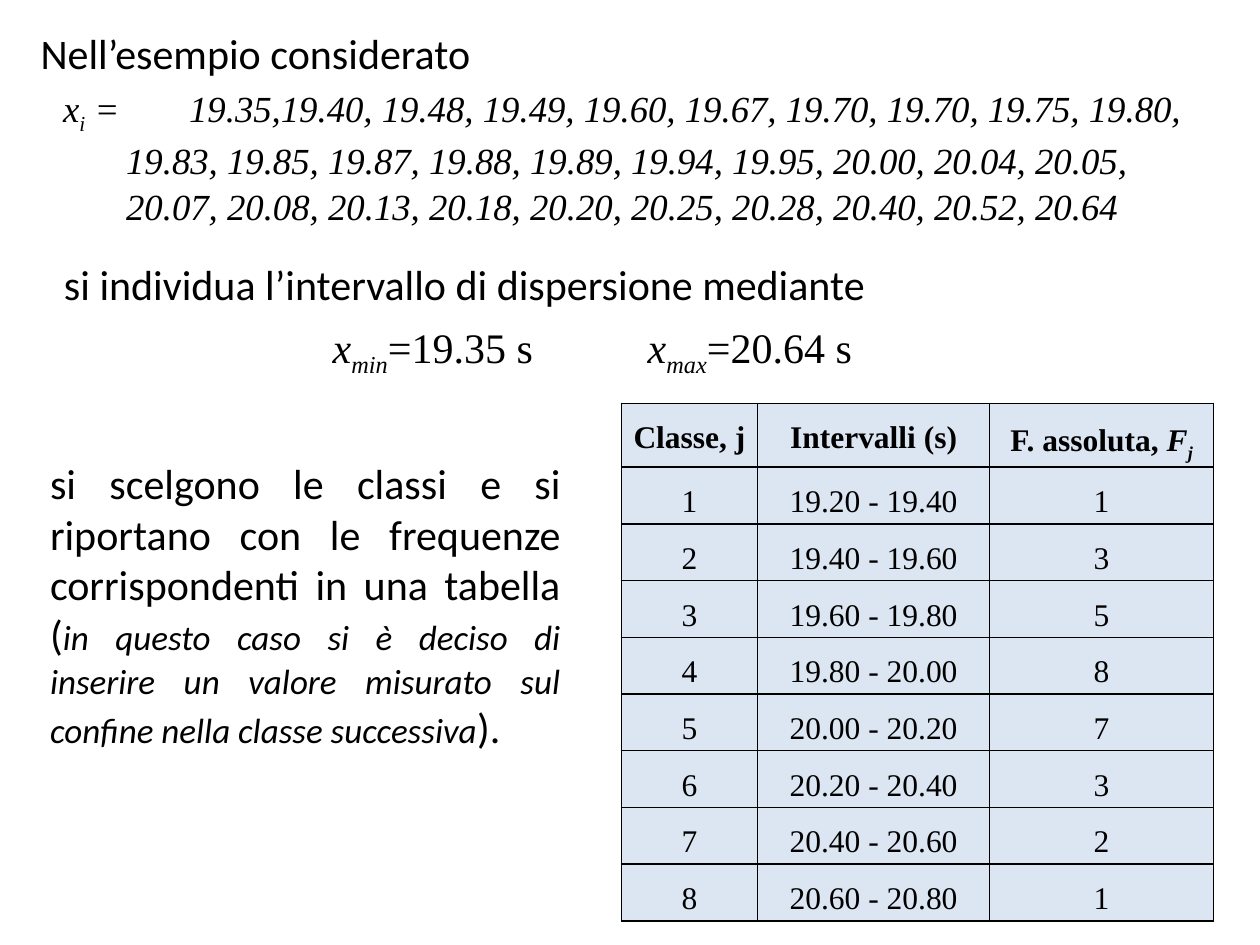
from dataclasses import dataclass

from lxml import etree
from pptx import Presentation
from pptx.dml.color import RGBColor
from pptx.enum.text import MSO_ANCHOR, MSO_AUTO_SIZE, PP_ALIGN
from pptx.oxml.ns import qn
from pptx.util import Pt

TOP = MSO_ANCHOR.TOP
NO_FIT = MSO_AUTO_SIZE.NONE
CENTER, JUSTIFY = PP_ALIGN.CENTER, PP_ALIGN.JUSTIFY
TITLE_ONLY = 5


@dataclass(frozen=True)
class Theme:
    ink: RGBColor = RGBColor(0, 0, 0)
    fill: RGBColor = RGBColor(0xDC, 0xE6, 0xF2)
    sans: str = "Calibri"
    serif: str = "Times New Roman"
    text: float = 24
    data: float = 21
    note: float = 20
    cell: float = 18
    rule: float = 1


@dataclass(frozen=True)
class Run:
    text: str
    italic: bool | None = None
    sub: bool = False
    size: float | None = None


@dataclass(frozen=True)
class Block:
    box: tuple[float, float, float, float]
    lines: list[list[Run]]
    face: str
    size: float
    align: PP_ALIGN = JUSTIFY
    italic: bool = False
    gap: float = 0


THEME = Theme()

HEAD = Block((16, 12, 623.5, 65.5), [[Run("Nell’esempio considerato")]],
             THEME.sans, THEME.text)
BLOCKS = [
    Block((29, 45.5, 682.5, 83.5), [
        [Run("x"), Run("i", sub=True),
         Run(" = \t19.35,19.40, 19.48, 19.49, 19.60, 19.67, 19.70, 19.70, 19.75, 19.80, ")],
        [Run("\t19.83, 19.85, 19.87, 19.88, 19.89, 19.94, 19.95, 20.00, 20.04, 20.05, ")],
        [Run("\t20.07, 20.08, 20.13, 20.18, 20.20, 20.25, 20.28, 20.40, 20.52, 20.64")],
    ], THEME.serif, THEME.data, italic=True, gap=1),
    Block((29.5, 144, 618, 36),
          [[Run("si individua l’intervallo di dispersione mediante")]],
          THEME.sans, THEME.text),
    Block((158.5, 180, 360, 36), [[
        Run("x", True), Run("min", True, True), Run("=19.35 s\t\t"),
        Run("x", True), Run("max", True, True), Run("=20.64 s"),
    ]], THEME.serif, THEME.text, CENTER),
    Block((21.5, 258, 306, 177), [[
        Run("si scelgono le classi e si riportano con le frequenze "
            "corrispondenti in una tabella ("),
        Run("in questo caso si è deciso di inserire un valore misurato "
            "sul confine nella classe successiva", True, size=THEME.note),
        Run(")."),
    ]], THEME.sans, THEME.text),
]

LABELS = [[Run("Classe, j")], [Run("Intervalli (s)")],
          [Run("F. assoluta, "), Run("F", True), Run("j", True, True)]]
COUNTS = [1, 3, 5, 8, 7, 3, 2, 1]
START, STEP = 19.2, 0.2
LEFT, UP = 355, 230.5
COLS = [78, 132.5, 128]
HEAD_ROW, ROW = 36.5, 32.4


def add_runs(para, runs: list[Run], face: str, size: float,
             bold: bool = False, italic: bool = False) -> None:
    font = para.font
    font.name, font.size = face, Pt(size)
    font.bold, font.italic = bold, italic
    font.color.rgb = THEME.ink
    for part in runs:
        run = para.add_run()
        run.text = part.text
        if part.italic is not None:
            run.font.italic = part.italic
        if part.size:
            run.font.size = Pt(part.size)
        if part.sub:
            run._r.get_or_add_rPr().set("baseline", "-25000")


def fill_block(shape, block: Block) -> None:
    shape.left, shape.top, shape.width, shape.height = map(Pt, block.box)
    frame = shape.text_frame
    frame.word_wrap = True
    frame.auto_size = NO_FIT
    frame.vertical_anchor = TOP
    for i, runs in enumerate(block.lines):
        para = frame.add_paragraph() if i else frame.paragraphs[0]
        para.alignment = block.align
        if i and block.gap:
            para.space_before = Pt(block.gap)
        add_runs(para, runs, block.face, block.size, italic=block.italic)


def add_rules(cell) -> None:
    """Draw a thin line on all four sides of a cell."""
    props = cell._tc.get_or_add_tcPr()
    for i, side in enumerate(("lnL", "lnR", "lnT", "lnB")):
        line = etree.Element(qn(f"a:{side}"), w=str(Pt(THEME.rule)))
        fill = etree.SubElement(line, qn("a:solidFill"))
        etree.SubElement(fill, qn("a:srgbClr"), val=str(THEME.ink))
        props.insert(i, line)


def fill_cell(cell, runs: list[Run], bold: bool) -> None:
    cell.fill.solid()
    cell.fill.fore_color.rgb = THEME.fill
    cell.margin_left = cell.margin_right = Pt(5)
    cell.margin_top = cell.margin_bottom = Pt(0)
    cell.vertical_anchor = TOP
    para = cell.text_frame.paragraphs[0]
    para.alignment = CENTER
    para.line_spacing = 1.5
    add_runs(para, runs, THEME.serif, THEME.cell, bold)
    add_rules(cell)


def add_classes(slide) -> None:
    rows = [LABELS]
    for i, count in enumerate(COUNTS):
        low = START + i * STEP
        span = f"{low:.2f} - {low + STEP:.2f}"
        rows.append([[Run(str(i + 1))], [Run(span)], [Run(str(count))]])
    high = HEAD_ROW + ROW * len(COUNTS)
    table = slide.shapes.add_table(len(rows), len(COLS), Pt(LEFT), Pt(UP),
                                   Pt(sum(COLS)), Pt(high)).table
    table.first_row = table.horz_banding = False
    for col, width in zip(table.columns, COLS):
        col.width = Pt(width)
    for r, row in enumerate(rows):
        table.rows[r].height = Pt(ROW if r else HEAD_ROW)
        for c, runs in enumerate(row):
            fill_cell(table.cell(r, c), runs, bold=r == 0)


def main() -> None:
    deck = Presentation()
    deck.slide_width, deck.slide_height = Pt(720), Pt(540)
    slide = deck.slides.add_slide(deck.slide_layouts[TITLE_ONLY])
    fill_block(slide.shapes.title, HEAD)
    for block in BLOCKS:
        fill_block(slide.shapes.add_textbox(*map(Pt, block.box)), block)
    add_classes(slide)
    deck.save("out.pptx")


if __name__ == "__main__":
    main()
